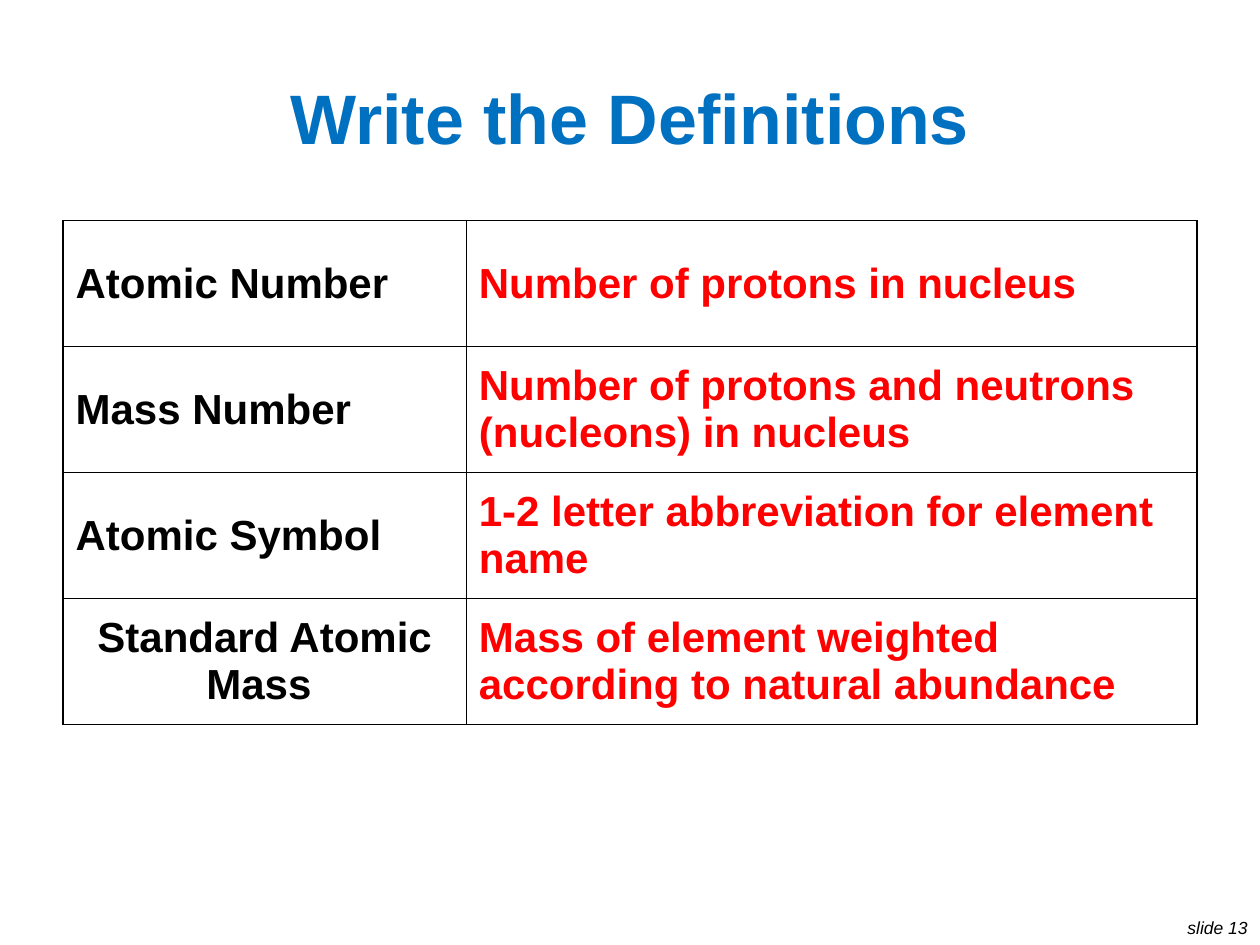
from pptx import Presentation
from pptx.dml.color import RGBColor
from pptx.enum.text import MSO_ANCHOR, PP_ALIGN
from pptx.oxml import parse_xml
from pptx.oxml.ns import nsdecls
from pptx.util import Cm, Pt

LEFT, CENTER, RIGHT = PP_ALIGN.LEFT, PP_ALIGN.CENTER, PP_ALIGN.RIGHT
MIDDLE = MSO_ANCHOR.MIDDLE

BLACK = RGBColor(0x00, 0x00, 0x00)
BLUE = RGBColor(0x00, 0x70, 0xC0)
RED = RGBColor(0xFF, 0x00, 0x00)

TITLE = "Write the Definitions"
FOOTER = "slide 13"
DEFINITIONS = [  # term, its alignment, definition
    ("Atomic Number", LEFT, "Number of protons in nucleus"),
    ("Mass Number", LEFT, "Number of protons and neutrons (nucleons) in nucleus"),
    ("Atomic Symbol", LEFT, "1-2 letter abbreviation for element name"),
    ("Standard Atomic Mass ", CENTER,
     "Mass of element weighted according to natural abundance"),
]

MARGIN = 1.27
TABLE_TOP = 4.45
COLUMN_WIDTHS = (8.13, 14.73)
ROW_HEIGHT = 2.54
TABLE_WIDTH = sum(COLUMN_WIDTHS)


def write(frame, text, size=24, color=BLACK, bold=False, italic=False, align=LEFT):
    paragraph = frame.paragraphs[0]
    paragraph.alignment = align
    run = paragraph.add_run()
    run.text = text
    font = run.font
    font.name, font.size, font.color.rgb = "Arial", Pt(size), color
    font.bold, font.italic = bold, italic


def add_text(slide, left, top, width, height, text, wrap=True, **text_format):
    box = slide.shapes.add_textbox(Cm(left), Cm(top), Cm(width), Cm(height))
    box.text_frame.word_wrap = wrap
    box.text_frame.vertical_anchor = MIDDLE
    write(box.text_frame, text, **text_format)


def outline(cell, color=BLACK, width=Pt(1)):
    properties = cell._tc.get_or_add_tcPr()
    for position, side in enumerate(("lnL", "lnR", "lnT", "lnB")):
        properties.insert(position, parse_xml(
            f'<a:{side} {nsdecls("a")} w="{int(width)}"><a:solidFill>'
            f'<a:srgbClr val="{color}"/></a:solidFill></a:{side}>'))


def add_definitions(slide):
    table = slide.shapes.add_table(
        len(DEFINITIONS), len(COLUMN_WIDTHS), Cm(MARGIN), Cm(TABLE_TOP),
        Cm(TABLE_WIDTH), Cm(ROW_HEIGHT * len(DEFINITIONS))).table
    table.first_row = table.horz_banding = False
    for column, width in zip(table.columns, COLUMN_WIDTHS):
        column.width = Cm(width)
    for row, (term, term_align, definition) in zip(table.rows, DEFINITIONS):
        row.height = Cm(ROW_HEIGHT)
        contents = ((term, BLACK, term_align), (definition, RED, LEFT))
        for cell, (text, color, align) in zip(row.cells, contents):
            cell.vertical_anchor = MIDDLE
            cell.fill.background()
            outline(cell)
            write(cell.text_frame, text, color=color, bold=True, align=align)


def main():
    deck = Presentation()
    deck.slide_width, deck.slide_height = Cm(25.4), Cm(19.05)
    slide = deck.slides.add_slide(deck.slide_layouts[6])
    add_text(slide, 23.62, 18.36, 1.78, 0.69, FOOTER, wrap=False,
             size=10, italic=True, align=RIGHT)
    add_definitions(slide)
    add_text(slide, MARGIN, 0.76, TABLE_WIDTH, 3.18, TITLE,
             size=40, color=BLUE, bold=True, align=CENTER)
    deck.save("out.pptx")


if __name__ == "__main__":
    main()
